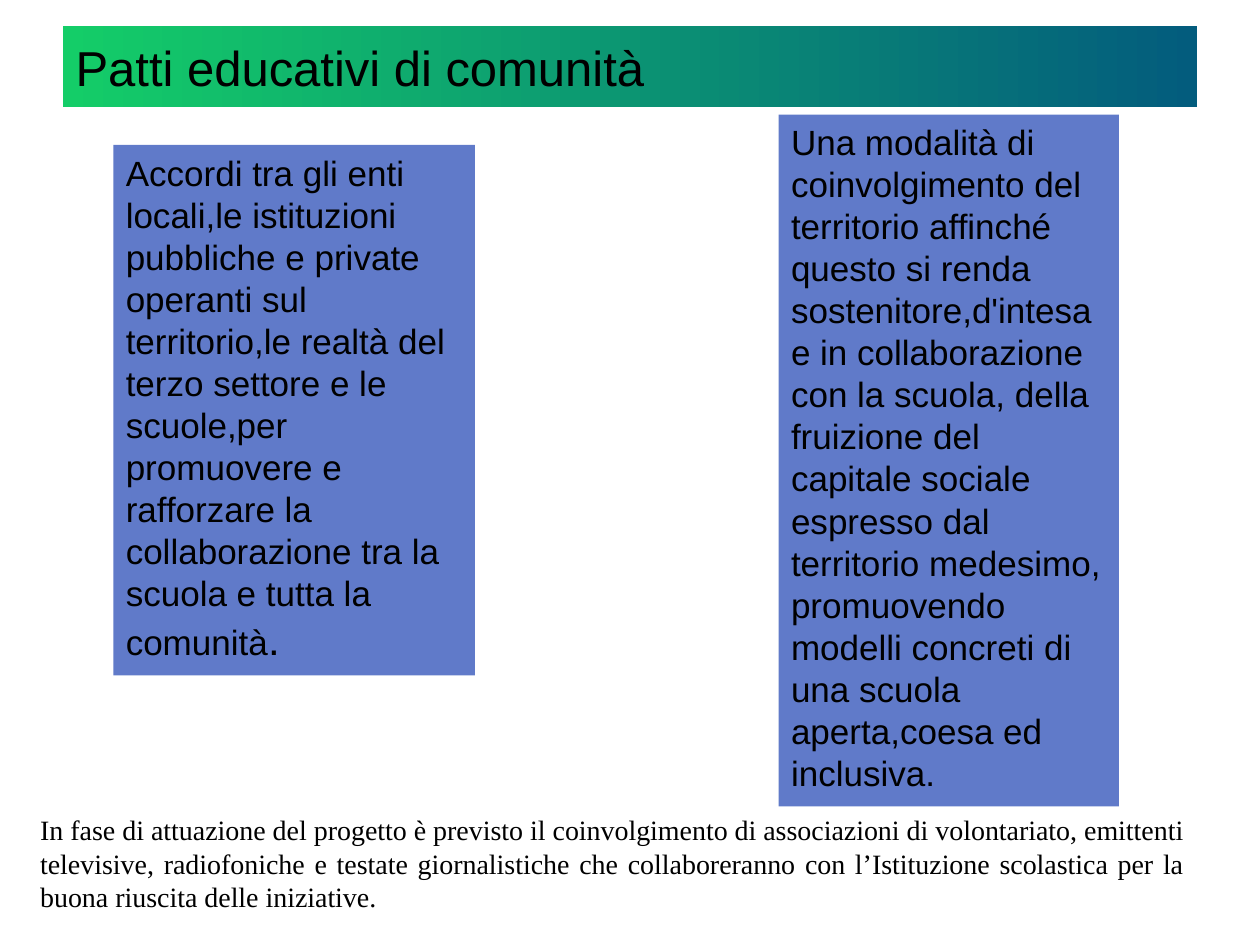
from pptx import Presentation
from pptx.dml.color import RGBColor
from pptx.enum.shapes import MSO_SHAPE
from pptx.enum.text import MSO_ANCHOR, MSO_AUTO_SIZE, PP_ALIGN
from pptx.util import Inches, Pt

BLACK = RGBColor(0x00, 0x00, 0x00)
GREEN = RGBColor(0x14, 0xCD, 0x68)
TEAL = RGBColor(0x03, 0x5C, 0x7D)
BLUE = RGBColor(0x60, 0x7A, 0xC9)

# Content: runs are (text, size in points), places are left, top, width, height
TITLE = [("Patti educativi di comunità", 28)]
TITLE_PLACE = (0.5, 0.21, 9, 0.64)

PANELS = [
    ((0.9, 1.15, 2.87, 4.21), [
        ("Accordi tra gli enti locali,le istituzioni pubbliche e private "
         "operanti sul territorio,le realtà del terzo settore e le scuole,per "
         "promuovere e rafforzare la collaborazione tra la scuola e tutta la "
         "comunità", 20),
        (".", 24),
    ]),
    ((6.18, 0.91, 2.7, 5.49), [
        ("Una modalità di coinvolgimento del territorio affinché questo si "
         "renda sostenitore,d'intesa e in collaborazione con la scuola, della "
         "fruizione del capitale sociale espresso dal territorio medesimo, "
         "promuovendo modelli concreti di una scuola aperta,coesa ed "
         "inclusiva.", 20),
    ]),
]

CLOSING = [
    ("In fase di attuazione del progetto è previsto il coinvolgimento di "
     "associazioni di volontariato, emittenti televisive, radiofoniche e "
     "testate giornalistiche che collaboreranno con l’Istituzione scolastica "
     "per la buona riuscita delle iniziative.", 16),
]
CLOSING_PLACE = (0.22, 6.4, 9.28, 0.91)


def write_text(shape, runs, font="Arial", align=PP_ALIGN.LEFT,
               anchor=MSO_ANCHOR.TOP, auto_size=MSO_AUTO_SIZE.SHAPE_TO_FIT_TEXT):
    frame = shape.text_frame
    frame.word_wrap = True
    frame.auto_size = auto_size
    frame.vertical_anchor = anchor
    paragraph = frame.paragraphs[0]
    paragraph.alignment = align
    for text, size in runs:
        run = paragraph.add_run()
        run.text = text
        run.font.name = font
        run.font.size = Pt(size)
        run.font.color.rgb = BLACK


def main():
    deck = Presentation()
    deck.slide_width, deck.slide_height = Inches(10), Inches(7.5)
    slide = deck.slides.add_slide(deck.slide_layouts[5])

    # Title band with a left-to-right gradient
    title = slide.shapes.title
    title.left, title.top, title.width, title.height = map(Inches, TITLE_PLACE)
    title.fill.gradient()
    title.fill.gradient_angle = 0
    for stop, color, position in zip(title.fill.gradient_stops, (GREEN, TEAL), (0, 1)):
        stop.color.rgb = color
        stop.position = position
    write_text(title, TITLE, anchor=MSO_ANCHOR.MIDDLE, auto_size=MSO_AUTO_SIZE.NONE)

    # Blue panels
    for place, runs in PANELS:
        panel = slide.shapes.add_shape(MSO_SHAPE.RECTANGLE, *map(Inches, place))
        panel.shadow.inherit = False
        panel.fill.solid()
        panel.fill.fore_color.rgb = BLUE
        panel.line.fill.background()
        write_text(panel, runs)

    # Closing note
    closing = slide.shapes.add_textbox(*map(Inches, CLOSING_PLACE))
    write_text(closing, CLOSING, font="Times New Roman", align=PP_ALIGN.JUSTIFY)

    deck.save("out.pptx")


if __name__ == "__main__":
    main()
